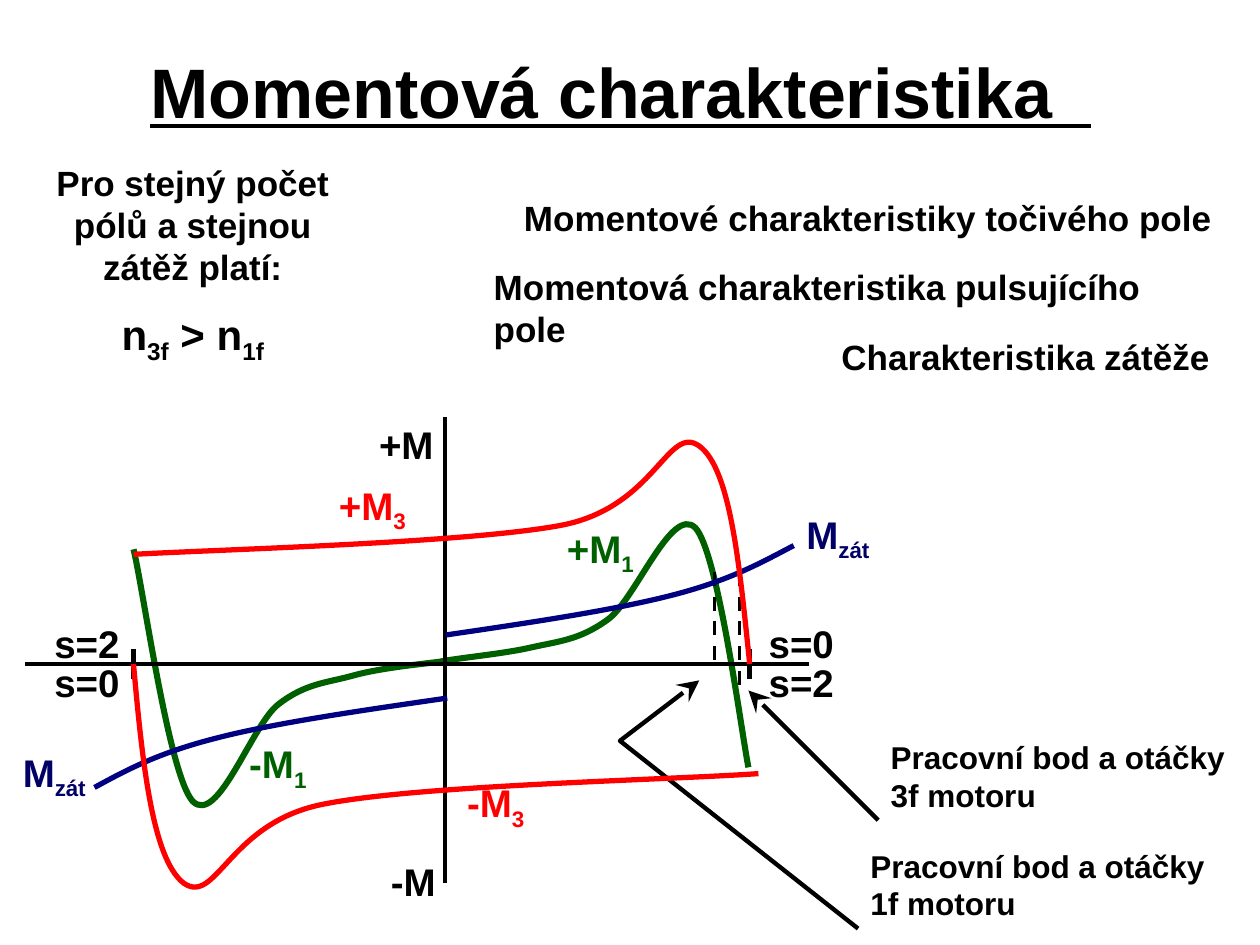
from dataclasses import dataclass
from itertools import product

from lxml import etree
from pptx import Presentation
from pptx.dml.color import RGBColor
from pptx.enum.dml import MSO_LINE
from pptx.enum.shapes import MSO_CONNECTOR
from pptx.enum.text import MSO_ANCHOR, MSO_AUTO_SIZE, PP_ALIGN
from pptx.oxml.ns import qn
from pptx.util import Inches, Pt

LEFT, CENTER = PP_ALIGN.LEFT, PP_ALIGN.CENTER
TOP, MIDDLE, BOTTOM = MSO_ANCHOR.TOP, MSO_ANCHOR.MIDDLE, MSO_ANCHOR.BOTTOM
GROW = MSO_AUTO_SIZE.SHAPE_TO_FIT_TEXT
STRAIGHT, DASH = MSO_CONNECTOR.STRAIGHT, MSO_LINE.DASH

Point = tuple[float, float]
Box = tuple[float, float, float, float]


@dataclass(frozen=True)
class Theme:
    font: str = "Arial"
    black: str = "000000"
    red: str = "FF0000"
    green: str = "006000"
    navy: str = "000080"
    label_navy: str = "000066"
    title: int = 40
    formula: int = 24
    label: int = 22
    body: int = 20
    note: int = 18


THEME = Theme()


@dataclass(frozen=True)
class Run:
    text: str
    size: int
    color: str = THEME.black
    subscript: bool = False
    underline: bool = False


@dataclass(frozen=True)
class Label:
    box: Box
    text: str
    subscript: str = ""
    color: str = THEME.black


@dataclass(frozen=True)
class Curve:
    points: tuple[Point, ...]
    color: str
    width: float


@dataclass(frozen=True)
class Line:
    start: Point
    end: Point
    width: float
    dashed: bool = False
    arrow: bool = False


LABELS = (
    Label((6.34, 4.06, 0.62, 0.45), "M", "zát", THEME.label_navy),
    Label((0.12, 5.95, 0.62, 0.45), "M", "zát", THEME.label_navy),
    Label((2.64, 3.83, 0.63, 0.45), "+M", "3", THEME.red),
    Label((3.66, 6.19, 0.55, 0.45), "-M", "3", THEME.red),
    Label((4.45, 4.17, 0.63, 0.45), "+M", "1", THEME.green),
    Label((1.93, 5.88, 0.55, 0.45), "-M", "1", THEME.green),
    Label((2.96, 3.3, 0.53, 0.45), "+M"),
    Label((3.06, 6.77, 0.44, 0.45), "-M"),
) + tuple(
    Label((left, top, 0.6, 0.45), "s=0" if (left > 1) == (top < 5) else "s=2")
    for left, top in product((0.39, 6.06), (4.88, 5.19))
)

HEADINGS = (
    ((4.06, 1.51, 5.75, 0.43), "Momentové charakteristiky točivého pole"),
    ((3.82, 2.06, 5.98, 0.43), "Momentová charakteristika pulsujícího pole"),
    ((6.58, 2.61, 3.23, 0.43), "Charakteristika zátěže"),
)

NOTES = (
    ((6.97, 5.81, 2.91, 0.7), "3f motoru"),
    ((6.81, 6.67, 2.91, 0.7), "1f motoru"),
)

LINES = (
    Line((5.95, 5.15), (5.95, 5.39), 3),
    Line((1.06, 5.15), (1.06, 5.39), 3),
    Line((3.53, 3.31), (3.53, 7.01), 2),
    Line((6.42, 5.27), (0.2, 5.27), 2),
    Line((5.67, 4.54), (5.67, 5.32), 2, dashed=True),
    Line((5.87, 4.54), (5.87, 5.48), 2, dashed=True),
    Line((6.97, 6.51), (5.94, 5.48), 2.5, arrow=True),
)

SINGLE_PHASE_CURVES = (
    Curve(((5.94, 6.09), (5.88, 5.78), (5.7, 4.39), (5.52, 4.19), (5.33, 4),
           (5.04, 4.77), (4.82, 4.92), (4.6, 5.08), (4.43, 5.09), (4.21, 5.14),
           (3.99, 5.19), (3.65, 5.22), (3.5, 5.25)), THEME.green, 3.5),
    Curve(((1.06, 4.36), (1.14, 4.69), (1.34, 6.15), (1.53, 6.36), (1.73, 6.56),
           (2, 5.75), (2.21, 5.59), (2.43, 5.42), (2.6, 5.42), (2.81, 5.36),
           (3.03, 5.3), (3.36, 5.27), (3.51, 5.25)), THEME.green, 3.5),
)

FRONT_CURVES = (
    Curve(((6.3, 4.33), (6.05, 4.46), (5.81, 4.6), (5.35, 4.72),
           (4.89, 4.84), (4.22, 4.94), (3.54, 5.04)), THEME.navy, 3),
    Curve(((0.75, 6.25), (0.99, 6.12), (1.24, 5.98), (1.71, 5.86),
           (2.17, 5.74), (2.86, 5.64), (3.55, 5.54)), THEME.navy, 3),
    Curve(((5.95, 5.27), (5.87, 4.5), (5.8, 3.72), (5.55, 3.54), (5.3, 3.36),
           (5.2, 4.03), (4.45, 4.17), (3.7, 4.31), (1.77, 4.36), (1.06, 4.4)),
          THEME.red, 3),
    Curve(((1.06, 5.27), (1.13, 6.05), (1.21, 6.82), (1.46, 7.01), (1.72, 7.19),
           (1.82, 6.52), (2.58, 6.38), (3.34, 6.23), (5.31, 6.19), (6.02, 6.14)),
          THEME.red, 3),
)

POINTER = ((6.81, 7.37), (4.92, 5.88), (5.55, 5.4))


def add_text(slide, box: Box, paragraphs: list[list[Run]], align=LEFT, anchor=TOP,
             wrap: bool = True, inset: float | None = None, gap: float = 0) -> None:
    shape = slide.shapes.add_textbox(*map(Inches, box))
    frame = shape.text_frame
    frame.word_wrap = wrap
    frame.vertical_anchor = anchor
    if anchor != MIDDLE:
        frame.auto_size = GROW
    if inset is not None:
        frame.margin_left = frame.margin_right = Inches(inset)
        frame.margin_top = frame.margin_bottom = Inches(inset)
    for index, runs in enumerate(paragraphs):
        paragraph = frame.add_paragraph() if index else frame.paragraphs[0]
        paragraph.alignment = align
        paragraph.space_before = Pt(gap if index else 0)
        for item in runs:
            run = paragraph.add_run()
            run.text = item.text
            run.font.name = THEME.font
            run.font.size = Pt(item.size)
            run.font.bold = True
            run.font.underline = item.underline
            run.font.color.rgb = RGBColor.from_string(item.color)
            if item.subscript:
                run._r.get_or_add_rPr().set("baseline", "-25000")


def style_line(shape, color: str, width: float, arrow: bool = False) -> None:
    shape.line.color.rgb = RGBColor.from_string(color)
    shape.line.width = Pt(width)
    if arrow:
        outline = shape.line._get_or_add_ln()
        etree.SubElement(outline, qn("a:tailEnd"), type="stealth", w="lg", len="lg")


def add_line(slide, line: Line) -> None:
    connector = slide.shapes.add_connector(STRAIGHT, *map(Inches, line.start + line.end))
    style_line(connector, THEME.black, line.width, line.arrow)
    if line.dashed:
        connector.line.dash_style = DASH
    etree.SubElement(connector._element.spPr, qn("a:effectLst"))


def add_outline(slide, points: tuple[Point, ...], color: str, width: float,
                arrow: bool = False):
    start, *rest = [(Inches(x), Inches(y)) for x, y in points]
    builder = slide.shapes.build_freeform(*start)
    builder.add_line_segments(rest, close=False)
    shape = builder.convert_to_shape()
    shape.shadow.inherit = False
    shape.fill.background()
    style_line(shape, color, width, arrow)
    return shape


def add_curves(slide, curves: tuple[Curve, ...]) -> None:
    for curve in curves:
        shape = add_outline(slide, curve.points, curve.color, curve.width)
        segments = list(shape._element.iter(qn("a:lnTo")))
        outline = segments[0].getparent()
        for first in range(0, len(segments), 3):
            bezier = etree.SubElement(outline, qn("a:cubicBezTo"))
            for segment in segments[first:first + 3]:
                bezier.append(segment[0])
                outline.remove(segment)


def main() -> None:
    presentation = Presentation()
    presentation.slide_width, presentation.slide_height = Inches(10), Inches(7.5)
    slide = presentation.slides.add_slide(presentation.slide_layouts[6])

    title = Run("Momentová charakteristika  ", THEME.title, underline=True)
    add_text(slide, (0.2, 0.21, 9.45, 1.02), [[title]], CENTER, MIDDLE)
    formula = [Run(text, THEME.formula, subscript=lowered) for text, lowered in
               (("n", False), ("3f", True), (" > n", False), ("1f", True))]
    claim = Run("Pro stejný počet pólů a stejnou zátěž platí:", THEME.body)
    add_text(slide, (0.27, 1.23, 2.52, 1.7), [[claim], formula], CENTER, gap=12)
    for box, text in HEADINGS:
        add_text(slide, box, [[Run(text, THEME.body)]], wrap=False)
    for box, motor in NOTES:
        add_text(slide, box, [[Run(text, THEME.note)] for text in ("Pracovní bod a otáčky", motor)])

    add_curves(slide, SINGLE_PHASE_CURVES)
    for line in LINES:
        add_line(slide, line)
    for label in LABELS:
        runs = [Run(label.text, THEME.label, label.color)]
        if label.subscript:
            runs.append(Run(label.subscript, THEME.label, label.color, subscript=True))
        add_text(slide, label.box, [runs], CENTER, BOTTOM, wrap=False, inset=0.04)
    add_outline(slide, POINTER, THEME.black, 2.5, arrow=True)
    add_curves(slide, FRONT_CURVES)
    presentation.save("out.pptx")


if __name__ == "__main__":
    main()
